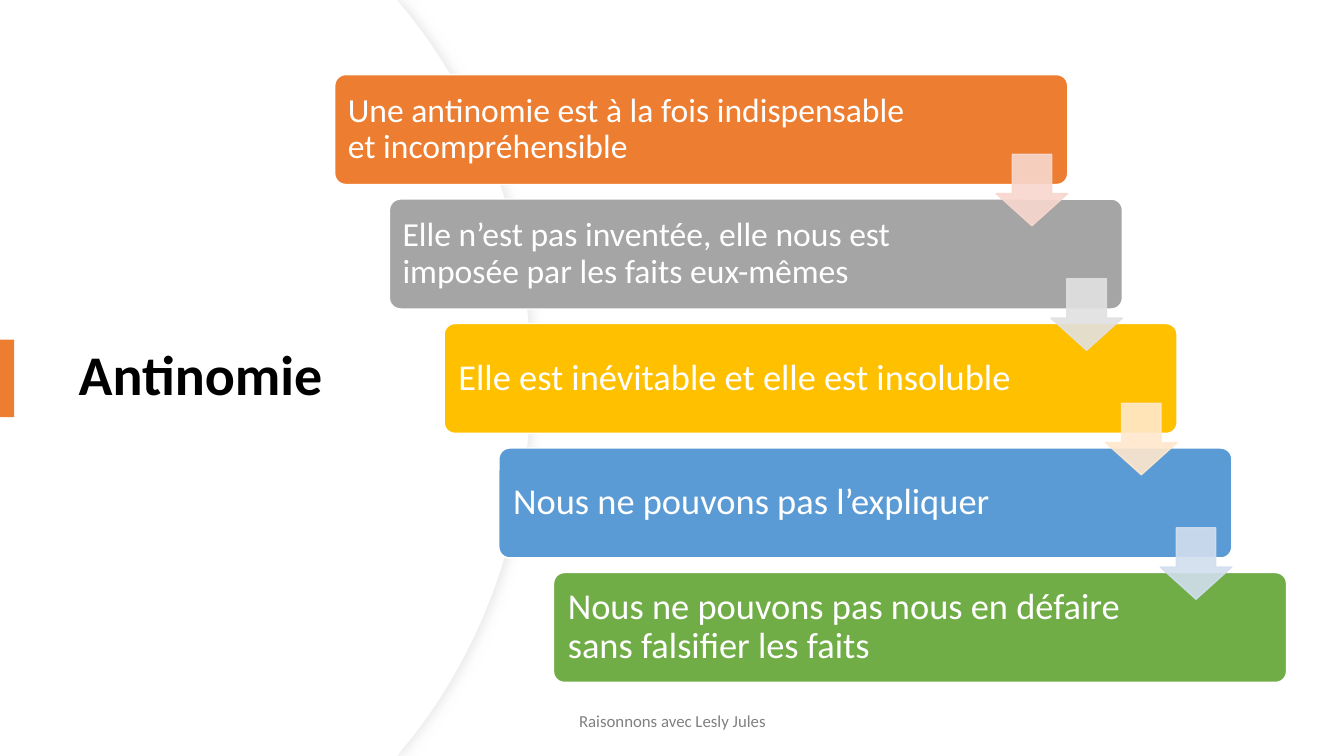
from dataclasses import dataclass

from lxml import etree
from pptx import Presentation
from pptx.dml.color import RGBColor
from pptx.enum.shapes import MSO_SHAPE as Shape
from pptx.enum.text import MSO_ANCHOR as Anchor, PP_ALIGN as Align
from pptx.oxml.ns import qn
from pptx.util import Inches, Pt

TITLE = "Antinomie"
FOOTER = "Raisonnons avec Lesly Jules"
STEPS = [
    ("Une antinomie est à la fois indispensable et incompréhensible", 24, "ED7D31", "F8D7CE"),
    ("Elle n’est pas inventée, elle nous est imposée par les faits eux-mêmes", 24, "A5A5A5", "E1E1E1"),
    ("Elle est inévitable et elle est insoluble", 26, "FFC000", "FFE8CC"),
    ("Nous ne pouvons pas l’expliquer", 26, "5B9BD5", "D2DEEF"),
    ("Nous ne pouvons pas nous en défaire sans falsifier les faits", 26, "70AD47", None),
]


@dataclass(frozen=True)
class Theme:
    font: str = "Calibri"
    title_size: int = 40
    footer_size: int = 12
    ink: str = "000000"
    muted: str = "808080"
    paper: str = "FFFFFF"
    accent: str = "ED7D31"
    panel_edge: str = "EFEFEF"
    panel_shadow: str = "D9D9D9"


THEME = Theme()
WIDTH, HEIGHT = 13.33, 7.5
BAR_WIDTH, BAR_HEIGHT = 7.27, 1.09
FIRST_BAR, LAST_BAR = (3.32, 0.74), (5.49, 5.68)
BAR_SHIFT, BAR_PITCH = [(last - first) / (len(STEPS) - 1)
                        for first, last in zip(FIRST_BAR, LAST_BAR)]
ARROW_SIZE, ARROW_DROP = 0.71, 0.79
CURVE_STARTS = (2, 5)


def box(left, top, width, height):
    return [Inches(value) for value in (left, top, width, height)]


def bar_corner(index):
    return FIRST_BAR[0] + index * BAR_SHIFT, FIRST_BAR[1] + index * BAR_PITCH


def paint(shape, fill, line=None, weight=1):
    shape.shadow.inherit = False
    shape.fill.solid()
    shape.fill.fore_color.rgb = RGBColor.from_string(fill)
    if line:
        shape.line.color.rgb = RGBColor.from_string(line)
        shape.line.width = Pt(weight)
    else:
        shape.line.fill.background()


def write(shape, text, size, color, align=Align.LEFT, bold=False, spacing=0.9):
    frame = shape.text_frame
    frame.text = text
    frame.word_wrap = True
    frame.vertical_anchor = Anchor.MIDDLE
    paragraph = frame.paragraphs[0]
    paragraph.alignment = align
    paragraph.line_spacing = spacing
    font = paragraph.runs[0].font
    font.name, font.size, font.bold = THEME.font, Pt(size), bold
    font.color.rgb = RGBColor.from_string(color)


def set_opacity(shape, percent):
    for color in shape._element.spPr.iter(qn("a:srgbClr")):
        etree.SubElement(color, qn("a:alpha"), val=str(percent * 1000))


def add_panel_shadow(panel):
    effects = panel._element.spPr.find(qn("a:effectLst"))
    shadow = etree.SubElement(effects, qn("a:outerShdw"), blurRad=str(Pt(7)),
                              dist=str(Pt(3)), dir="0", rotWithShape="0")
    color = etree.SubElement(shadow, qn("a:srgbClr"), val=THEME.panel_shadow)
    etree.SubElement(color, qn("a:alpha"), val="50000")


def panel_outline(shift):
    upper = [(4.01 - shift, 0.08), (4.79 - shift, 1.02), (5.27 - shift, 2.32)]
    lower = [(x, HEIGHT - y) for x, y in reversed(upper)]
    middle = (5.27 - shift, HEIGHT / 2)
    return [(3.94, 0), *upper, middle, *lower, (3.94, HEIGHT), (0, HEIGHT)]


def bend(panel):
    outline = next(panel._element.iter(qn("a:lnTo"))).getparent()
    segments = outline.findall(qn("a:lnTo"))
    for start in CURVE_STARTS:
        curve = etree.Element(qn("a:cubicBezTo"))
        segments[start].addprevious(curve)
        for segment in segments[start:start + 3]:
            curve.append(segment[0])
            outline.remove(segment)


def add_panel(slide, title, shift, edge):
    builder = slide.shapes.build_freeform(0, 0, scale=1.0)
    points = [(Inches(x), Inches(y)) for x, y in panel_outline(shift)]
    builder.add_line_segments(points, close=True)
    panel = builder.convert_to_shape()
    bend(panel)
    paint(panel, THEME.paper, edge, 0.75)
    title._element.addprevious(panel._element)
    return panel


def add_bar(slide, index, text, size, fill):
    bar = slide.shapes.add_shape(
        Shape.ROUNDED_RECTANGLE, *box(*bar_corner(index), BAR_WIDTH, BAR_HEIGHT))
    bar.adjustments[0] = 0.1
    paint(bar, fill, THEME.paper)
    write(bar, text, size, THEME.paper)
    bar.text_frame.margin_left = Inches(0.1 if size < 26 else 0.11)
    bar.text_frame.margin_right = Inches(1.36)


def add_arrow(slide, index, fill):
    left, top = bar_corner(index)
    arrow = slide.shapes.add_shape(Shape.DOWN_ARROW, *box(
        left + BAR_WIDTH - ARROW_SIZE, top + ARROW_DROP, ARROW_SIZE, ARROW_SIZE))
    arrow.adjustments[0], arrow.adjustments[1] = 0.55, 0.45
    paint(arrow, fill, fill)
    set_opacity(arrow, 90)


def main():
    presentation = Presentation()
    presentation.slide_width, presentation.slide_height = Inches(WIDTH), Inches(HEIGHT)
    slide = presentation.slides.add_slide(presentation.slide_layouts[5])

    title = slide.shapes.title
    title.left, title.top, title.width, title.height = box(0.68, 1.27, 3.94, 4.95)
    write(title, TITLE, THEME.title_size, THEME.ink, bold=True)
    add_panel_shadow(add_panel(slide, title, 0, THEME.panel_edge))
    add_panel(slide, title, 0.01, None)

    marker = slide.shapes.add_shape(Shape.RECTANGLE, *box(0, 3.37, 0.14, 0.77))
    paint(marker, THEME.accent)
    footer = slide.shapes.add_textbox(*box(4.42, 6.95, 4.5, 0.4))
    write(footer, FOOTER, THEME.footer_size, THEME.muted, Align.CENTER, spacing=1.0)

    for index, (text, size, fill, _) in enumerate(STEPS):
        add_bar(slide, index, text, size, fill)
    for index, (_, _, _, arrow_fill) in enumerate(STEPS[:-1]):
        add_arrow(slide, index, arrow_fill)

    presentation.save("out.pptx")


if __name__ == "__main__":
    main()
